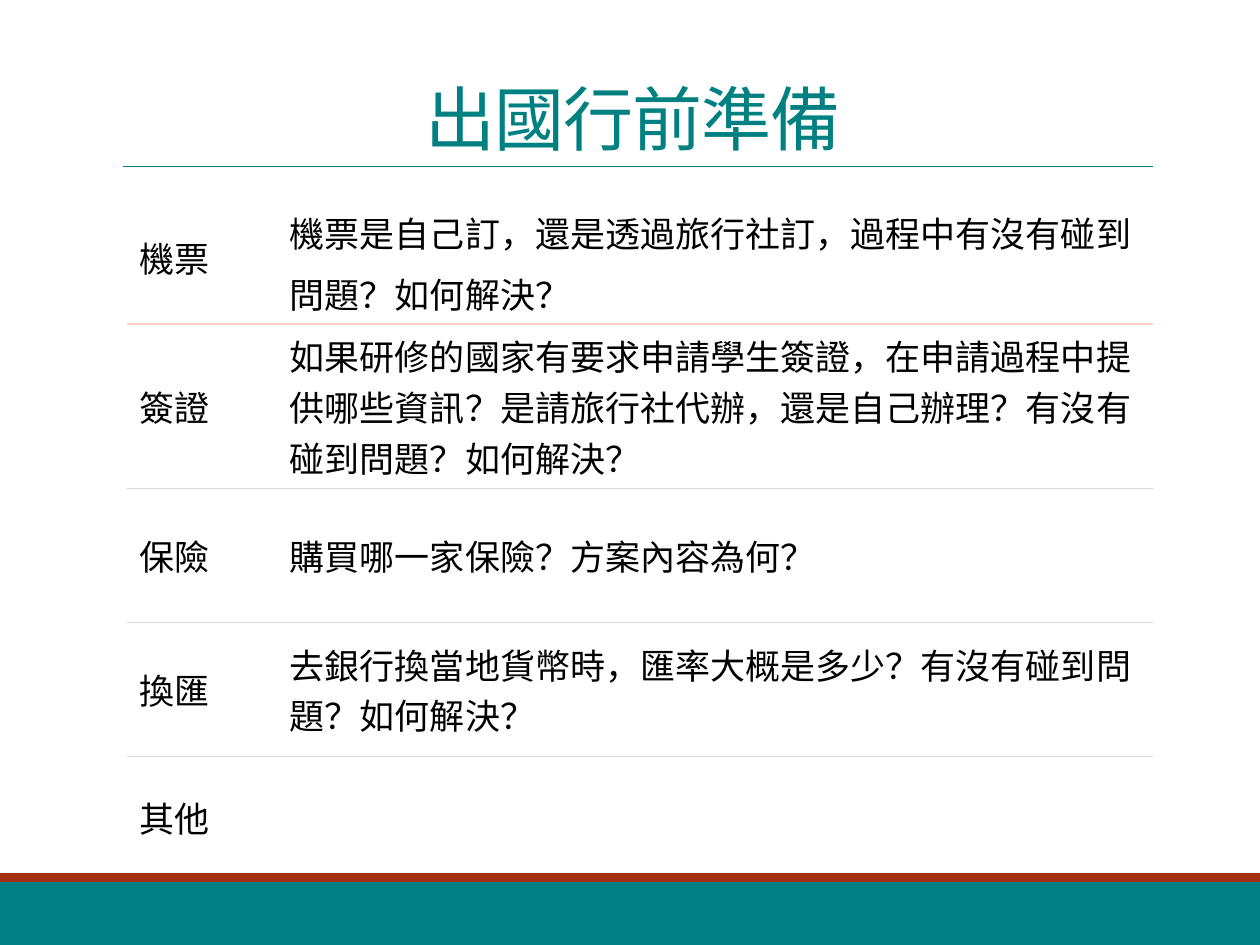
from lxml.etree import SubElement
from pptx import Presentation
from pptx.dml.color import RGBColor
from pptx.enum.shapes import MSO_CONNECTOR, MSO_SHAPE
from pptx.enum.text import MSO_ANCHOR, PP_ALIGN
from pptx.oxml import parse_xml
from pptx.oxml.ns import nsdecls, qn
from pptx.util import Inches, Pt

TITLE = "出國行前準備"
TOPICS = [
    ("機票", "機票是自己訂，還是透過旅行社訂，過程中有沒有碰到問題？如何解決？"),
    ("簽證", "如果研修的國家有要求申請學生簽證，在申請過程中提供哪些資訊？"
             "是請旅行社代辦，還是自己辦理？有沒有碰到問題？如何解決？"),
    ("保險", "購買哪一家保險？方案內容為何？"),
    ("換匯", "去銀行換當地貨幣時，匯率大概是多少？有沒有碰到問題？如何解決？"),
    ("其他", ""),
]
COLUMN_WIDTHS = [1.19, 6.95]
ROW_HEIGHTS = [1.06, 1.31, 1.06, 1.06, 0.98]
RULES = [("peach", 1), ("gray", 0.5), ("gray", 0.5), ("gray", 0.5), None]
COLORS = {"teal": "008080", "rust": "A5300F", "black": "000000",
          "peach": "F9CFC3", "gray": "D9D9D9"}
FONT = "Noto Sans CJK SC"


def rgb(name):
    return RGBColor.from_string(COLORS[name])


def style_runs(paragraph, size, color):
    for run in paragraph.runs:
        run.font.name = FONT
        run.font.size = Pt(size)
        run.font.color.rgb = rgb(color)
        SubElement(run.font._element, qn("a:ea")).set("typeface", FONT)


def add_band(slide, top, height, color):
    band = slide.shapes.add_shape(MSO_SHAPE.RECTANGLE, 0, Inches(top), Inches(10), Inches(height))
    band.shadow.inherit = False
    band.fill.solid()
    band.fill.fore_color.rgb = rgb(color)
    band.line.fill.background()


def set_borders(cell, above, below):
    sides = {"lnL": None, "lnR": None, "lnT": above, "lnB": below}
    properties = cell._tc.get_or_add_tcPr()
    for position, (side, rule) in enumerate(sides.items()):
        if rule:
            color, width = rule
            paint = f'<a:solidFill><a:srgbClr val="{COLORS[color]}"/></a:solidFill>'
        else:
            width, paint = 0, "<a:noFill/>"
        border = parse_xml(f'<a:{side} {nsdecls("a")} w="{int(Pt(width))}">{paint}</a:{side}>')
        properties.insert(position, border)


def add_title(slide):
    title = slide.shapes.add_textbox(Inches(0.9), Inches(0.42), Inches(8.25), Inches(0.9))
    frame = title.text_frame
    frame.word_wrap = True
    frame.vertical_anchor = MSO_ANCHOR.BOTTOM
    frame.text = TITLE
    heading = frame.paragraphs[0]
    heading.alignment = PP_ALIGN.CENTER
    heading.line_spacing = 0.85
    style_runs(heading, 40, "teal")
    heading.runs[0].font._element.set("spc", "-50")

    underline = slide.shapes.add_connector(
        MSO_CONNECTOR.STRAIGHT, Inches(0.98), Inches(1.32), Inches(9.15), Inches(1.32))
    underline.line.color.rgb = rgb("teal")
    underline.line.width = Pt(0.5)
    SubElement(underline._element.spPr, qn("a:effectLst"))


def add_topics(slide):
    topics = slide.shapes.add_table(
        len(TOPICS), len(COLUMN_WIDTHS), Inches(1.01), Inches(1.51),
        Inches(sum(COLUMN_WIDTHS)), Inches(sum(ROW_HEIGHTS))).table
    topics.first_row = False
    topics.horz_banding = False
    for column, width in zip(topics.columns, COLUMN_WIDTHS):
        column.width = Inches(width)
    for r, (row, height, texts) in enumerate(zip(topics.rows, ROW_HEIGHTS, TOPICS)):
        row.height = Inches(height)
        for cell, text in zip(row.cells, texts):
            cell.text = text
            cell.vertical_anchor = MSO_ANCHOR.MIDDLE
            cell.fill.background()
            set_borders(cell, RULES[r - 1] if r else None, RULES[r])
            style_runs(cell.text_frame.paragraphs[0], 20, "black")
    topics.cell(0, 1).text_frame.paragraphs[0].line_spacing = 1.2


def main():
    deck = Presentation()
    deck.slide_width, deck.slide_height = Inches(10), Inches(7.5)
    slide = deck.slides.add_slide(deck.slide_layouts[6])
    add_band(slide, 7, 0.5, "teal")
    add_band(slide, 6.93, 0.07, "rust")
    add_title(slide)
    add_topics(slide)
    deck.save("out.pptx")


if __name__ == "__main__":
    main()
